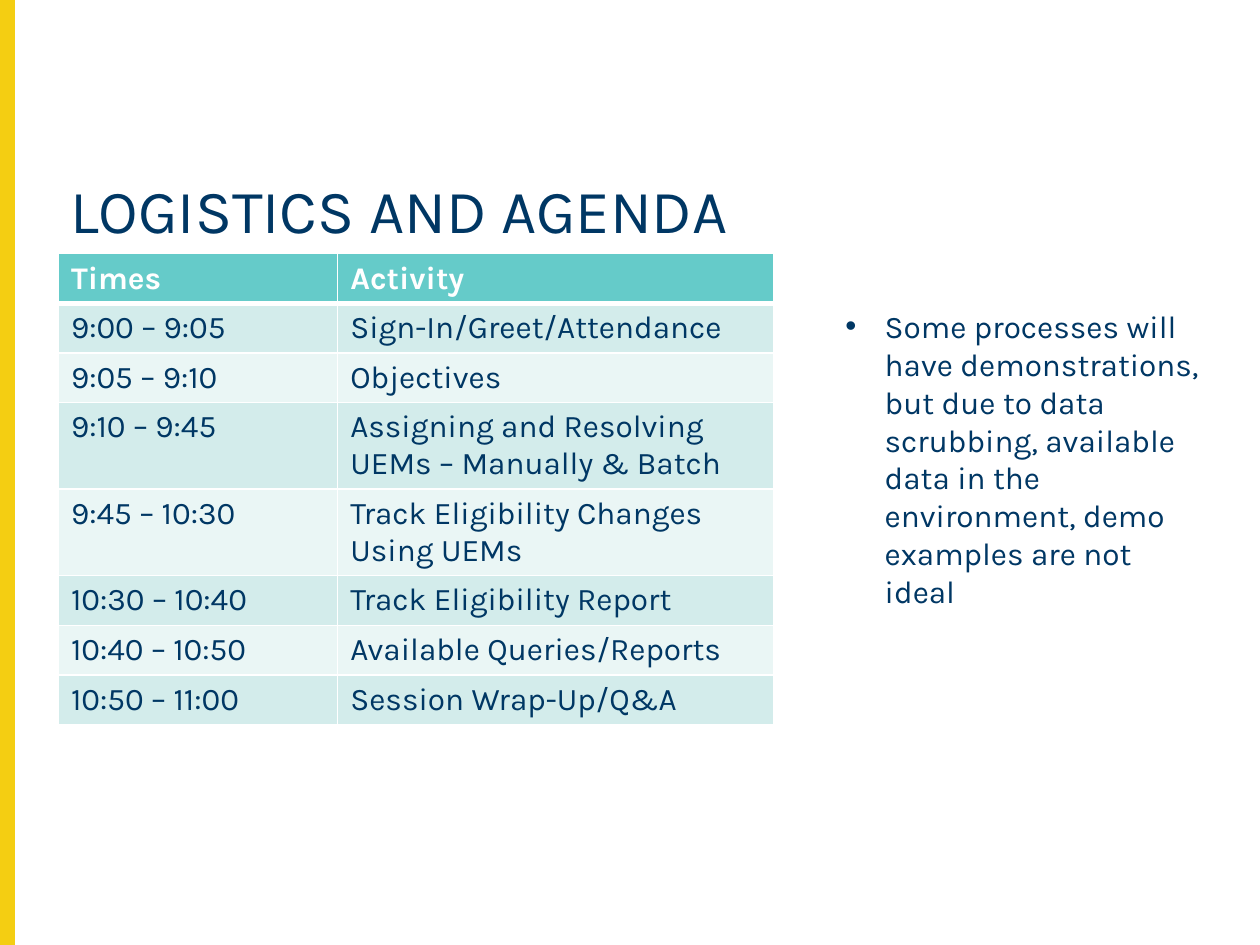
from lxml.etree import SubElement
from pptx import Presentation
from pptx.dml.color import RGBColor as RGB
from pptx.enum.shapes import MSO_SHAPE as SHAPE
from pptx.enum.text import MSO_ANCHOR as ANCHOR, MSO_AUTO_SIZE as FIT, PP_ALIGN as ALIGN
from pptx.oxml.ns import qn
from pptx.util import Pt

COLORS = {
    "navy": "003764",
    "yellow": "F4CE12",
    "teal": "65CBC9",
    "band": "D3ECEB",
    "light": "EAF6F5",
    "white": "FFFFFF",
}
AGENDA = [
    ("Times", "Activity"),
    ("9:00 – 9:05", "Sign-In/Greet/Attendance"),
    ("9:05 – 9:10", "Objectives"),
    ("9:10 – 9:45", "Assigning and Resolving UEMs – Manually & Batch"),
    ("9:45 – 10:30", "Track Eligibility Changes Using UEMs"),
    ("10:30 – 10:40", "Track Eligibility Report"),
    ("10:40 – 10:50", "Available Queries/Reports"),
    ("10:50 – 11:00", "Session Wrap-Up/Q&A"),
]
NOTE = (
    "Some processes will have demonstrations, but due to data scrubbing, "
    "available data in the environment, demo examples are not ideal"
)


def color(name):
    return RGB.from_string(COLORS[name])


def write(tf, text, size=18, ink="navy", bold=False, spacing=None):
    p = tf.paragraphs[0]
    p.alignment = ALIGN.LEFT
    p.line_spacing = spacing
    r = p.add_run()
    r.text = text
    r.font.name = "Karla"
    r.font.size = Pt(size)
    r.font.bold = bold
    r.font.color.rgb = color(ink)
    return p


def place(sp, left, top, width, height):
    sp.left, sp.top, sp.width, sp.height = map(Pt, (left, top, width, height))


def add_side_bar(s):
    sp = s.shapes.add_shape(SHAPE.RECTANGLE, 0, 0, Pt(8), Pt(540))
    sp.shadow.inherit = False
    sp.fill.solid()
    sp.fill.fore_color.rgb = color("yellow")
    sp.line.color.rgb = color("yellow")
    sp.line.width = Pt(1)


def add_title(s, text):
    sp = s.shapes.title
    place(sp, 33, 93.6, 672, 57)
    tf = sp.text_frame
    tf.auto_size = FIT.NONE
    tf.vertical_anchor = ANCHOR.MIDDLE
    write(tf, text, size=35, spacing=0.9)


def border_cell(cell, bottom):
    tcPr = cell._tc.get_or_add_tcPr()
    widths = {"a:lnL": 1, "a:lnR": 1, "a:lnT": 1, "a:lnB": bottom}
    for tag, width in widths.items():
        ln = SubElement(tcPr, qn(tag), w=str(Pt(width)))
        fill = SubElement(ln, qn("a:solidFill"))
        SubElement(fill, qn("a:srgbClr"), val=COLORS["white"])


def add_agenda(s, rows):
    row_height = 26.64
    frame = s.shapes.add_table(
        len(rows), 2, Pt(33.4), Pt(145), Pt(409), Pt(row_height * len(rows))
    )
    table = frame.table
    for column, width in zip(table.columns, (159.6, 249.4)):
        column.width = Pt(width)
    for i, row in enumerate(rows):
        header = i == 0
        fill = "teal" if header else ("light", "band")[i % 2]
        for j, text in enumerate(row):
            cell = table.cell(i, j)
            border_cell(cell, 3 if header else 1)
            cell.fill.solid()
            cell.fill.fore_color.rgb = color(fill)
            write(cell.text_frame, text, ink="white" if header else "navy", bold=header)


def add_bullet_note(s, text):
    sp = s.shapes.add_textbox(Pt(476), Pt(172), Pt(219), Pt(160))
    tf = sp.text_frame
    tf.word_wrap = True
    tf.auto_size = FIT.SHAPE_TO_FIT_TEXT
    pPr = write(tf, text)._p.get_or_add_pPr()
    pPr.set("marL", str(Pt(22.5)))
    pPr.set("indent", str(-Pt(22.5)))
    SubElement(pPr, qn("a:buFont"), typeface="Arial")
    SubElement(pPr, qn("a:buChar"), char="•")


def main():
    prs = Presentation()
    prs.slide_width, prs.slide_height = Pt(720), Pt(540)
    s = prs.slides.add_slide(prs.slide_layouts[5])
    add_side_bar(s)
    add_title(s, "LOGISTICS AND AGENDA")
    add_agenda(s, AGENDA)
    add_bullet_note(s, NOTE)
    prs.save("out.pptx")


if __name__ == "__main__":
    main()
